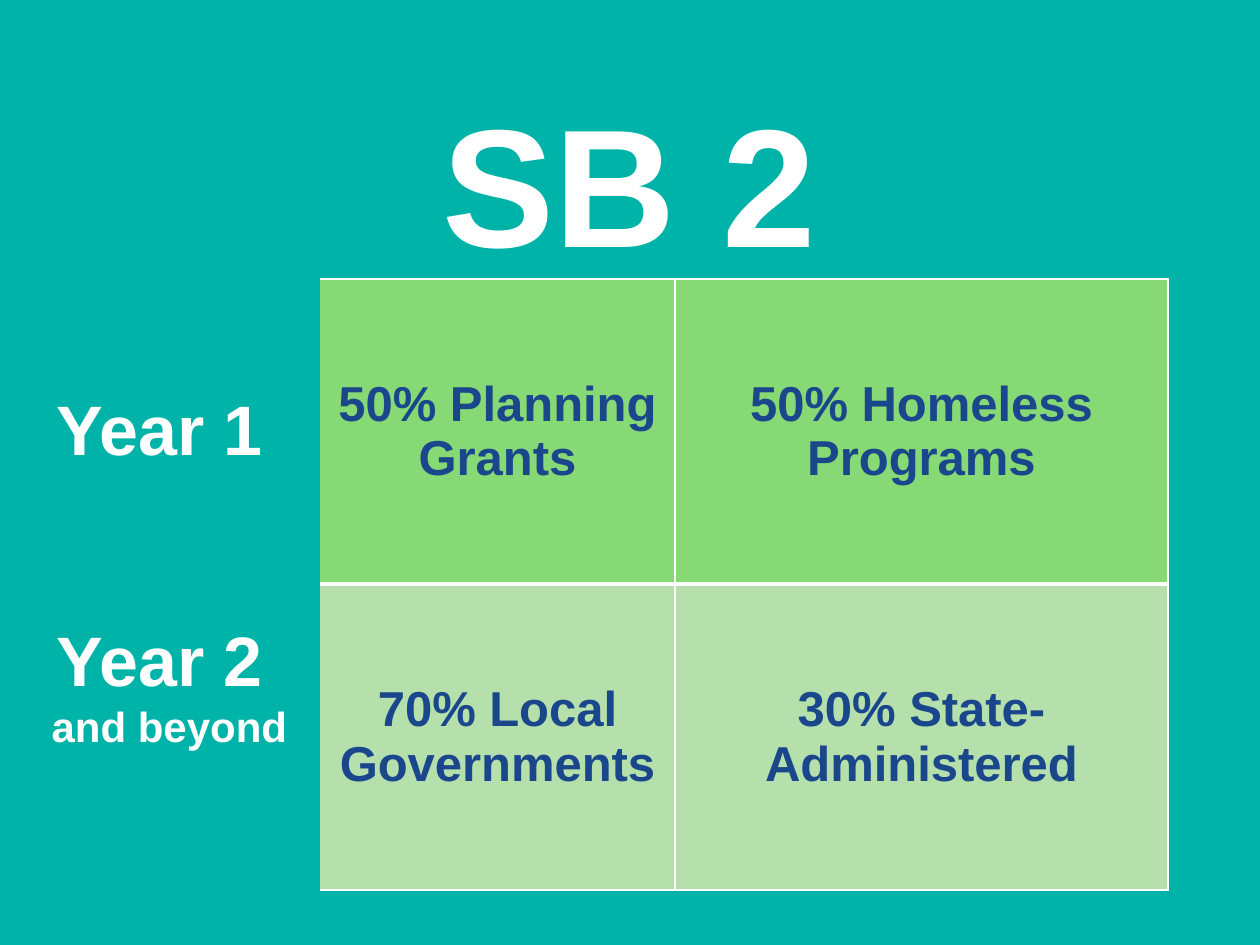
from dataclasses import dataclass

from lxml import etree
from pptx import Presentation
from pptx.dml.color import RGBColor
from pptx.enum.text import MSO_ANCHOR, PP_ALIGN
from pptx.oxml.ns import qn
from pptx.util import Pt

PX = 914400 / 126
LEFT, CENTER = PP_ALIGN.LEFT, PP_ALIGN.CENTER
TOP, MIDDLE = MSO_ANCHOR.TOP, MSO_ANCHOR.MIDDLE
NO_STYLE = "{2D5ABB26-0587-4C30-8999-92F81FD0307C}"


def px(n):
    """Turn whole pixels into EMU."""
    return round(n * PX)


@dataclass(frozen=True)
class Theme:
    """Colours, font and type sizes."""
    font: str = "Arial"
    back: str = "00B3A8"
    white: str = "FFFFFF"
    navy: str = "1A468C"
    year1: str = "86D974"
    year2: str = "B5E0AC"
    title: int = 96
    label: int = 40
    body: int = 28
    note: int = 24


class Deck:
    """Hold the theme and the current slide."""

    def __init__(self, theme):
        """Start a one-slide presentation."""
        self.theme = theme
        self.prs = Presentation()
        self.prs.slide_width, self.prs.slide_height = px(1260), px(945)
        self.s = self.prs.slides.add_slide(self.prs.slide_layouts[6])
        fill = self.s.background.fill
        fill.solid()
        fill.fore_color.rgb = RGBColor.from_string(theme.back)

    def run(self, p, text, size, color, align=LEFT):
        """Add one bold run to a paragraph."""
        p.alignment = align
        r = p.add_run()
        r.text = text
        r.font.name, r.font.size, r.font.bold = self.theme.font, Pt(size), True
        r.font.color.rgb = RGBColor.from_string(color)

    def title(self, text, x, y, w, h, inset):
        """Add the centred title."""
        tf = self.s.shapes.add_textbox(px(x), px(y), px(w), px(h)).text_frame
        tf.word_wrap, tf.vertical_anchor = True, TOP
        tf.margin_left = tf.margin_right = tf.margin_bottom = 0
        tf.margin_top = px(inset)
        self.run(tf.paragraphs[0], text, self.theme.title, self.theme.white, CENTER)

    def table(self, x, y, cols, rows):
        """Add an unstyled table with the given track sizes."""
        shape = self.s.shapes.add_table(
            len(rows), len(cols), px(x), px(y), px(sum(cols)), px(sum(rows)))
        table = shape.table
        table.first_row = table.horz_banding = False
        table._tbl.tblPr.find(qn("a:tableStyleId")).text = NO_STYLE
        for col, w in zip(table.columns, cols):
            col.width = px(w)
        for row, h in zip(table.rows, rows):
            row.height = px(h)
        return table

    def label(self, cell, lines, bottom=6):
        """Fill a row heading from (text, size, indent, space before) lines."""
        cell.fill.background()
        cell.vertical_anchor = MIDDLE
        cell.margin_bottom = px(bottom)
        tf = cell.text_frame
        for i, (text, size, indent, before) in enumerate(lines):
            p = tf.add_paragraph() if i else tf.paragraphs[0]
            p._p.get_or_add_pPr().set("marL", str(px(indent)))
            if before:
                p.space_before = Pt(before)
            self.run(p, text, size, self.theme.white)

    def share(self, cell, text, color, borders):
        """Fill a coloured cell and draw its borders."""
        for side, width in borders.items():
            ln = etree.SubElement(cell._tc.get_or_add_tcPr(), qn(f"a:ln{side}"), w=str(Pt(width)))
            fill = etree.SubElement(ln, qn("a:solidFill"))
            etree.SubElement(fill, qn("a:srgbClr"), val=self.theme.white)
        cell.fill.solid()
        cell.fill.fore_color.rgb = RGBColor.from_string(color)
        cell.vertical_anchor = MIDDLE
        self.run(cell.text_frame.paragraphs[0], text, self.theme.body, self.theme.navy, CENTER)


def main():
    """Build and save the slide."""
    theme = Theme()
    deck = Deck(theme)
    deck.title("SB 2", 43, 63, 1173, 793, 17)
    table = deck.table(25, 279, [295, 355, 493], [305, 306])
    deck.label(table.cell(0, 0), [("Year 1", theme.label, 19, 0)])
    deck.label(table.cell(1, 0), [("Year 2", theme.label, 19, 0),
                                  ("and beyond", theme.note, 14, 2)], bottom=106)
    shares = [
        (theme.year1, 1, 3, ["50% Planning Grants", "50% Homeless Programs"]),
        (theme.year2, 3, 1, ["70% Local Governments", "30% State-Administered"]),
    ]
    for row, (color, top, bottom, texts) in enumerate(shares):
        for col, text in enumerate(texts, 1):
            borders = {"L": 1} if col > 1 else {}
            borders |= {"R": 1, "T": top, "B": bottom}
            deck.share(table.cell(row, col), text, color, borders)
    deck.prs.save("out.pptx")


if __name__ == "__main__":
    main()
